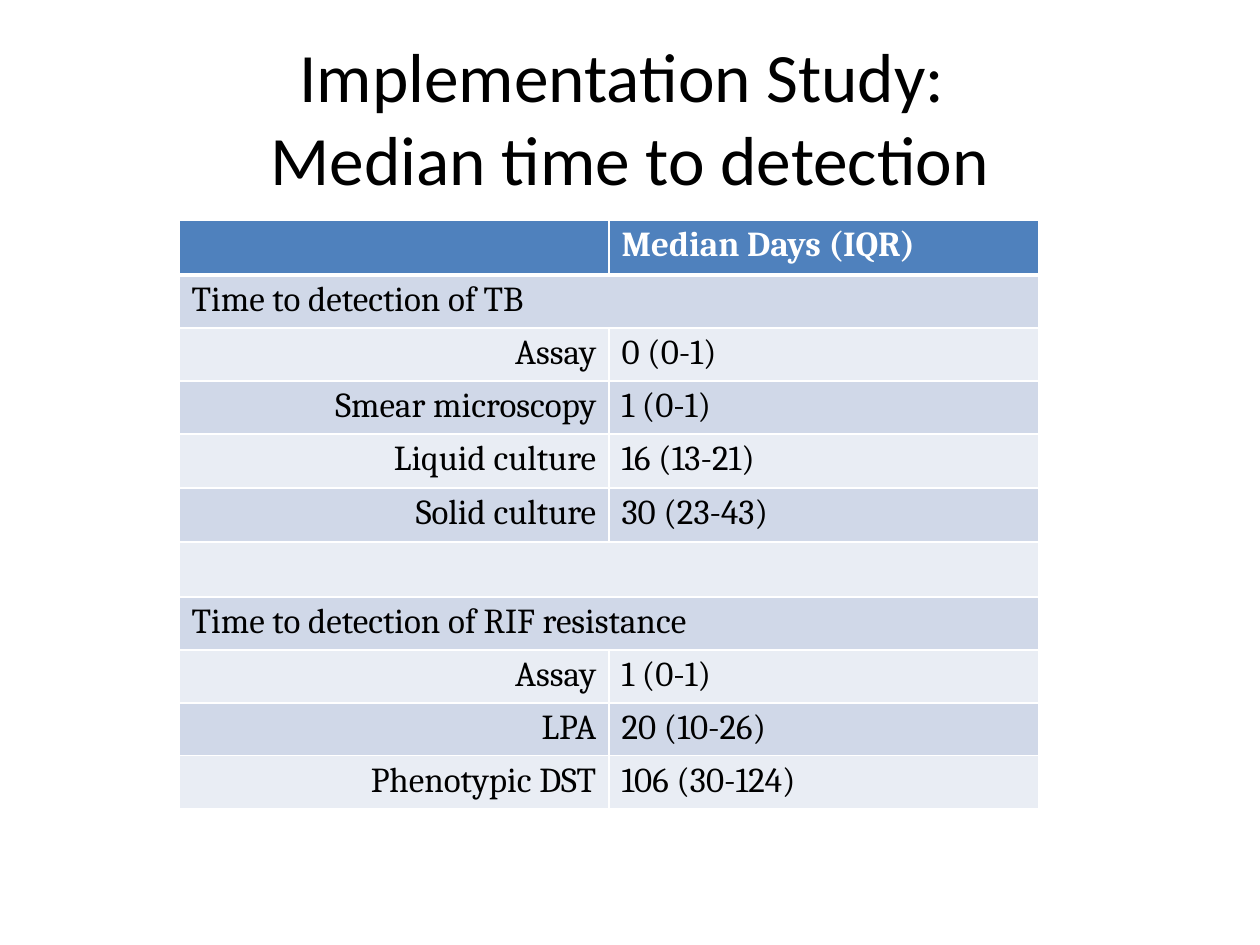
import lxml.etree
import pptx
import pptx.dml.color
import pptx.enum.text
import pptx.oxml.ns
import pptx.util

EMU_PER_PX = 914400 / 126
HEADER_FILL = "4F81BD"
BAND_FILLS = ["E9EDF4", "D0D8E8"]
ROW_HEIGHTS = [55, 53, 53, 53, 54, 54, 55, 53, 53, 53, 53]
ROWS = [
    ("", "Median Days (IQR)"),
    ("Time to detection of TB",),
    ("Assay", "0 (0-1)"),
    ("Smear microscopy", "1 (0-1)"),
    ("Liquid culture", "16 (13-21)"),
    ("Solid culture", "30 (23-43)"),
    ("",),
    ("Time to detection of RIF resistance",),
    ("Assay", "1 (0-1)"),
    ("LPA", "20 (10-26)"),
    ("Phenotypic DST", "106 (30-124)"),
]


def px(length):
    return pptx.util.Emu(round(length * EMU_PER_PX))


def color(value):
    return pptx.dml.color.RGBColor.from_string(value)


def add_run(paragraph, text, font_name, size, hex_color, bold=False):
    run = paragraph.add_run()
    run.text = text
    run.font.name = font_name
    run.font.size = pptx.util.Pt(size)
    run.font.bold = bold
    run.font.color.rgb = color(hex_color)


def add_title(slide, left, top, width, height):
    shape = slide.shapes.add_textbox(px(left), px(top), px(width), px(height))
    text_frame = shape.text_frame
    text_frame.word_wrap = True
    text_frame.vertical_anchor = pptx.enum.text.MSO_ANCHOR.MIDDLE
    paragraph = text_frame.paragraphs[0]
    paragraph.alignment = pptx.enum.text.PP_ALIGN.CENTER
    add_run(paragraph, "Implementation Study: ", "Calibri", 39.6, "000000")
    paragraph.add_line_break()
    add_run(paragraph, "Median time to detection", "Calibri", 39.6, "000000")


def set_borders(cell, widths):
    properties = cell._tc.get_or_add_tcPr()
    for side, width in zip("LRTB", widths):
        line = lxml.etree.SubElement(
            properties, pptx.oxml.ns.qn(f"a:ln{side}"), w=str(pptx.util.Pt(width))
        )
        fill = lxml.etree.SubElement(line, pptx.oxml.ns.qn("a:solidFill"))
        lxml.etree.SubElement(fill, pptx.oxml.ns.qn("a:srgbClr"), val="FFFFFF")


def add_detection_table(slide, left, top, width):
    frame = slide.shapes.add_table(
        len(ROWS), 2, px(left), px(top), px(width), px(sum(ROW_HEIGHTS))
    )
    table = frame.table
    table.first_row = False
    table.horz_banding = False
    for column in table.columns:
        column.width = px(width // 2)
    for index, (texts, height) in enumerate(zip(ROWS, ROW_HEIGHTS)):
        is_header = index == 0
        table.rows[index].height = px(height)
        top_width = 3 if index == 1 else 1
        bottom_width = 3 if is_header else 1
        for column_index in range(2):
            cell = table.cell(index, column_index)
            set_borders(cell, [1, 1, top_width, bottom_width])
            cell.margin_top = px(5)
            cell.margin_bottom = px(5)
            cell.fill.solid()
            cell.fill.fore_color.rgb = color(
                HEADER_FILL if is_header else BAND_FILLS[index % 2]
            )
        if len(texts) == 1:
            table.cell(index, 0).merge(table.cell(index, 1))
        for column_index, text in enumerate(texts):
            if not text:
                continue
            paragraph = table.cell(index, column_index).text_frame.paragraphs[0]
            if len(texts) == 2 and column_index == 0:
                paragraph.alignment = pptx.enum.text.PP_ALIGN.RIGHT
            text_color = "FFFFFF" if is_header else "000000"
            add_run(paragraph, text, "Cambria", 20, text_color, is_header)


def main():
    presentation = pptx.Presentation()
    presentation.slide_width = px(1260)
    presentation.slide_height = px(945)
    slide = presentation.slides.add_slide(presentation.slide_layouts[6])
    add_title(slide, 63, 37, 1134, 158)
    add_detection_table(slide, 179, 220, 860)
    presentation.save("out.pptx")


if __name__ == "__main__":
    main()
